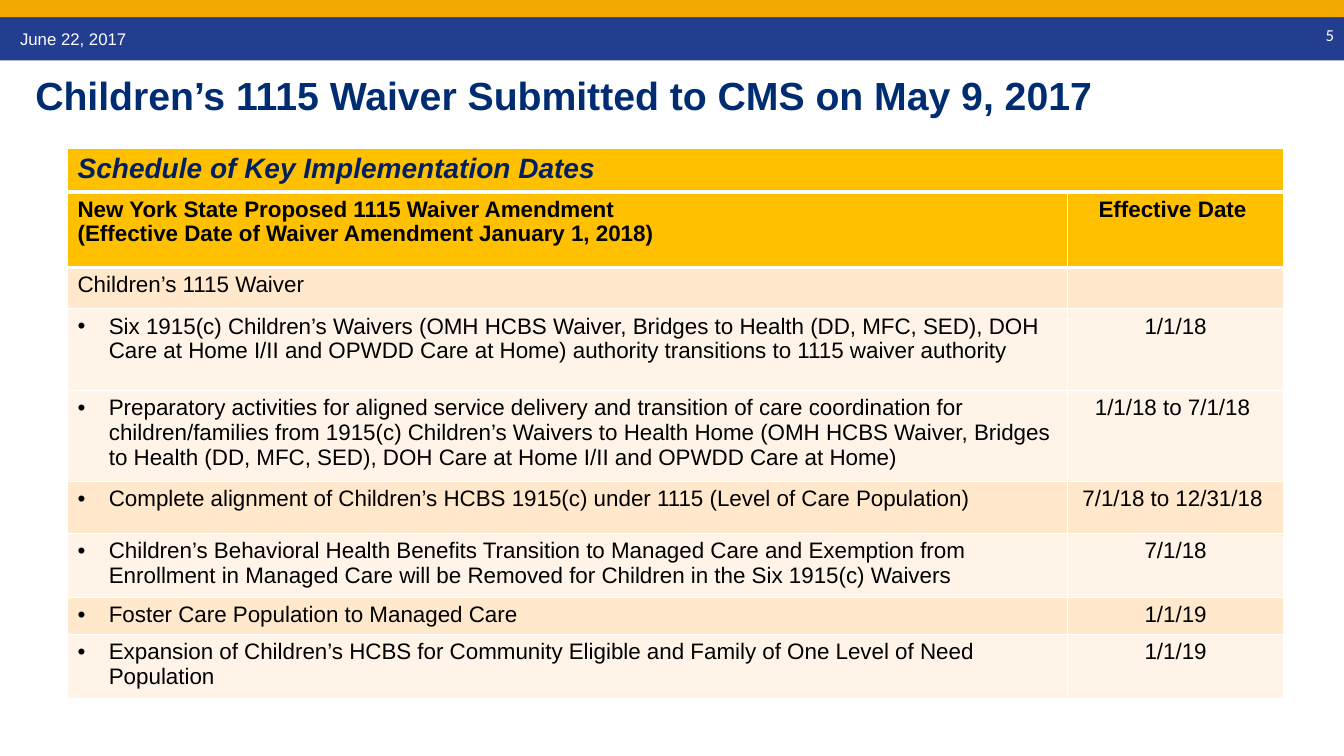
from dataclasses import dataclass

from lxml.etree import SubElement
from pptx import Presentation
from pptx.dml.color import RGBColor
from pptx.enum.shapes import MSO_SHAPE
from pptx.enum.text import MSO_ANCHOR, MSO_AUTO_SIZE, PP_ALIGN
from pptx.oxml.ns import qn
from pptx.slide import Slide
from pptx.table import _Cell as Cell
from pptx.text.text import TextFrame
from pptx.util import Inches, Pt

WHITE = RGBColor(0xFF, 0xFF, 0xFF)
BLACK = RGBColor(0x00, 0x00, 0x00)
BLUE = RGBColor(0x23, 0x3E, 0x90)
ORANGE = RGBColor(0xF2, 0xA9, 0x00)
TITLE_NAVY = RGBColor(0x00, 0x2D, 0x72)
HEADING_NAVY = RGBColor(0x00, 0x20, 0x60)
GOLD = RGBColor(0xFF, 0xC0, 0x00)
PEACH = RGBColor(0xFF, 0xE8, 0xCC)
CREAM = RGBColor(0xFF, 0xF4, 0xE7)

COLUMN_WIDTHS = (9.92, 2.14)
THIN, THICK = Pt(1), Pt(3)
HEADING_ROWS = 2


@dataclass
class Band:
    top: float
    height: float
    color: RGBColor


@dataclass
class Label:
    text: str
    left: float
    top: float
    width: float
    height: float
    font: str
    align: PP_ALIGN
    anchor: MSO_ANCHOR


@dataclass
class Milestone:
    activity: str
    date: str
    height: float
    fill: RGBColor
    size: int = 16
    color: RGBColor = BLACK
    bold: bool = False
    italic: bool = False
    bullet: bool = True


BANDS = (Band(0.17, 0.43, BLUE), Band(0, 0.17, ORANGE))

LABELS = (
    Label("June 22, 2017", 0.1, 0.24, 2.11, 0.3, "Arial", PP_ALIGN.LEFT, MSO_ANCHOR.TOP),
    Label("5", 10.33, 0.15, 3, 0.4, "Calibri", PP_ALIGN.RIGHT, MSO_ANCHOR.MIDDLE),
)

SCHEDULE = (
    Milestone("Schedule of Key Implementation Dates", "", 0.39, GOLD,
              size=20, color=HEADING_NAVY, bold=True, italic=True, bullet=False),
    Milestone("New York State Proposed 1115 Waiver Amendment\n"
              "(Effective Date of Waiver Amendment January 1, 2018)",
              "Effective Date ", 0.75, GOLD, bold=True, bullet=False),
    Milestone("Children’s 1115 Waiver", "", 0.41, PEACH, bullet=False),
    Milestone("Six 1915(c) Children’s Waivers (OMH HCBS Waiver, Bridges to Health "
              "(DD, MFC, SED), DOH Care at Home I/II and OPWDD Care at Home) "
              "authority transitions to 1115 waiver authority",
              "1/1/18", 0.81, CREAM),
    Milestone("Preparatory activities for aligned service delivery and transition of "
              "care coordination for children/families from 1915(c) Children’s Waivers "
              "to Health Home (OMH HCBS Waiver, Bridges to Health (DD, MFC, SED), "
              "DOH Care at Home I/II and OPWDD Care at Home)",
              "1/1/18 to 7/1/18 ", 0.84, CREAM),
    Milestone("Complete alignment of Children’s HCBS 1915(c) under 1115 "
              "(Level of Care Population)", "7/1/18 to 12/31/18 ", 0.52, PEACH),
    Milestone("Children’s Behavioral Health Benefits Transition to Managed Care and "
              "Exemption from Enrollment in Managed Care will be Removed for Children "
              "in the Six 1915(c) Waivers", "7/1/18", 0.6, CREAM),
    Milestone("Foster Care Population to Managed Care", "1/1/19", 0.34, PEACH),
    Milestone("Expansion of Children’s HCBS for Community Eligible and Family of One "
              "Level of Need Population", "1/1/19", 0.6, CREAM),
)


def format_text(frame: TextFrame, font: str, size: int, color: RGBColor,
                align: PP_ALIGN = PP_ALIGN.LEFT, bold: bool = False,
                italic: bool = False) -> None:
    for paragraph in frame.paragraphs:
        paragraph.alignment = align
        for run in paragraph.runs:
            run.font.name = font
            run.font.size = Pt(size)
            run.font.color.rgb = color
            run.font.bold = bold
            run.font.italic = italic


def add_band(slide: Slide, band: Band, width: int) -> None:
    bar = slide.shapes.add_shape(MSO_SHAPE.RECTANGLE, 0, Inches(band.top),
                                 width, Inches(band.height))
    bar.shadow.inherit = False
    bar.fill.solid()
    bar.fill.fore_color.rgb = band.color
    bar.line.fill.background()


def add_label(slide: Slide, label: Label) -> None:
    box = slide.shapes.add_textbox(Inches(label.left), Inches(label.top),
                                   Inches(label.width), Inches(label.height))
    frame = box.text_frame
    frame.word_wrap = True
    frame.vertical_anchor = label.anchor
    frame.text = label.text
    format_text(frame, label.font, 12, WHITE, label.align)


def add_bullet(cell: Cell) -> None:
    properties = cell.text_frame.paragraphs[0]._p.get_or_add_pPr()
    properties.set("marL", str(Inches(0.31)))
    properties.set("indent", str(-Inches(0.31)))
    SubElement(properties, qn("a:buFont"), typeface="Arial")
    SubElement(properties, qn("a:buChar"), char="•")


def add_borders(cell: Cell, top: int, bottom: int) -> None:
    properties = cell._tc.get_or_add_tcPr()
    for side, width in (("L", THIN), ("R", THIN), ("T", top), ("B", bottom)):
        line = SubElement(properties, qn(f"a:ln{side}"), w=str(width))
        fill = SubElement(line, qn("a:solidFill"))
        SubElement(fill, qn("a:srgbClr"), val=str(WHITE))


def add_schedule(slide: Slide) -> None:
    table = slide.shapes.add_table(
        len(SCHEDULE), len(COLUMN_WIDTHS), Inches(0.67), Inches(1.47),
        Inches(sum(COLUMN_WIDTHS)), Inches(sum(row.height for row in SCHEDULE))).table
    for column, width in zip(table.columns, COLUMN_WIDTHS):
        column.width = Inches(width)
    for index, milestone in enumerate(SCHEDULE):
        table.rows[index].height = Inches(milestone.height)
        top = THICK if 0 < index <= HEADING_ROWS else THIN
        bottom = THICK if index < HEADING_ROWS else THIN
        entries = ((milestone.activity, PP_ALIGN.LEFT), (milestone.date, PP_ALIGN.CENTER))
        for cell, (text, align) in zip(table.rows[index].cells, entries):
            cell.text_frame.text = text
            add_borders(cell, top, bottom)
            cell.fill.solid()
            cell.fill.fore_color.rgb = milestone.fill
            format_text(cell.text_frame, "Arial", milestone.size, milestone.color,
                        align, milestone.bold, milestone.italic)
        if milestone.bullet:
            add_bullet(table.cell(index, 0))
    table.cell(0, 0).merge(table.cell(0, 1))


def add_title(slide: Slide) -> None:
    title = slide.shapes.title
    title.left, title.top = Inches(0.25), Inches(0.71)
    title.width, title.height = Inches(11.15), Inches(0.75)
    frame = title.text_frame
    frame.text = "Children’s 1115 Waiver Submitted to CMS on May 9, 2017"
    frame.auto_size = MSO_AUTO_SIZE.NONE
    frame.vertical_anchor = MSO_ANCHOR.TOP
    frame.paragraphs[0].line_spacing = 0.9
    format_text(frame, "Arial", 28, TITLE_NAVY, bold=True)


def main() -> None:
    deck = Presentation()
    deck.slide_width, deck.slide_height = Inches(13.33), Inches(7.5)
    slide = deck.slides.add_slide(deck.slide_layouts.get_by_name("Title Only"))

    # Header bands with date and page number
    for band in BANDS:
        add_band(slide, band, deck.slide_width)
    for label in LABELS:
        add_label(slide, label)

    # Title and schedule
    add_title(slide)
    add_schedule(slide)
    deck.save("out.pptx")


if __name__ == "__main__":
    main()
